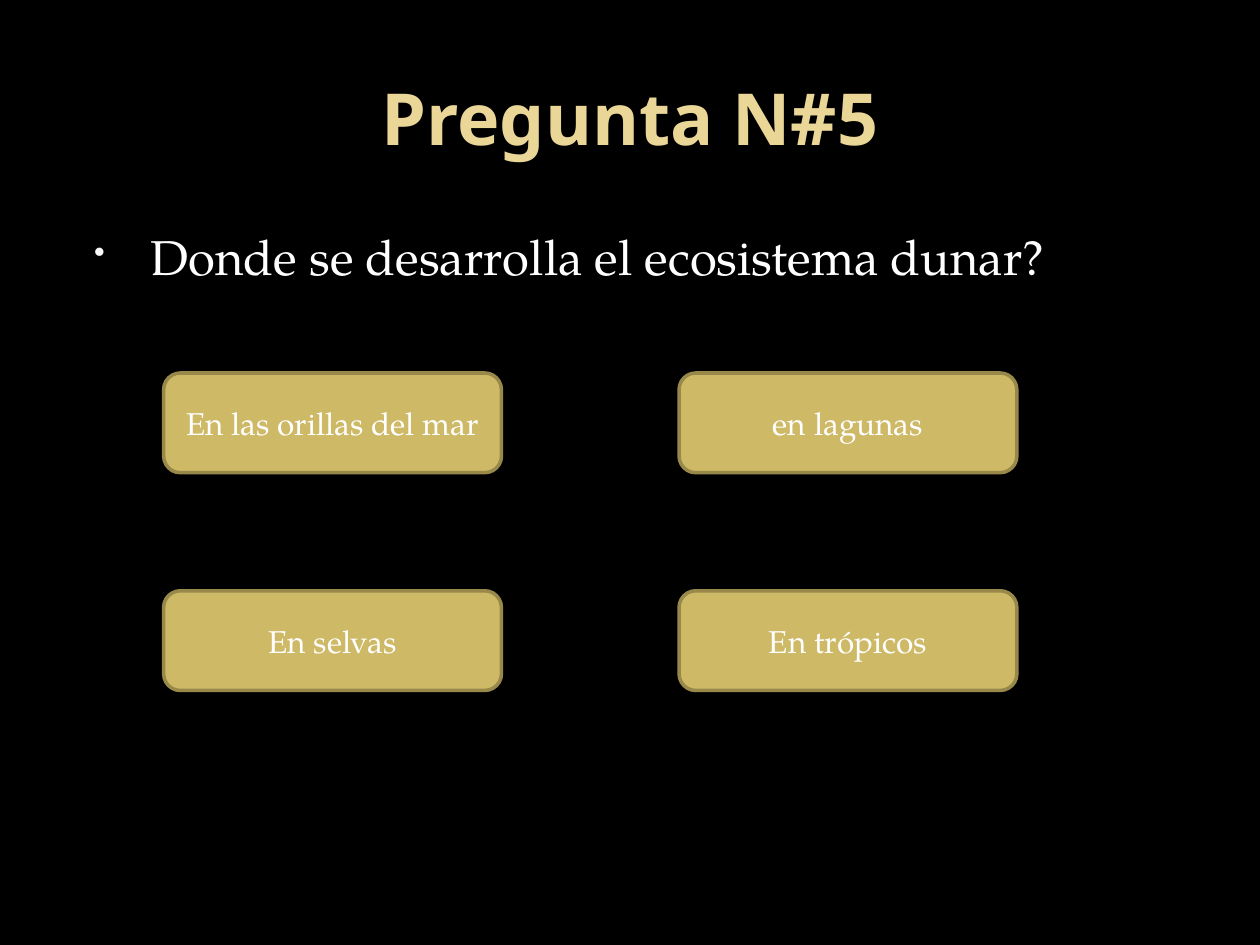
from dataclasses import dataclass

from lxml.etree import SubElement
from pptx import Presentation
from pptx.dml.color import RGBColor as Rgb
from pptx.enum.shapes import MSO_SHAPE as Shape
from pptx.enum.text import MSO_ANCHOR as Anchor, PP_ALIGN as Align
from pptx.oxml.ns import qn
from pptx.util import Cm, Pt


@dataclass(frozen=True)
class Theme:
    background: Rgb = Rgb(0x00, 0x00, 0x00)
    title: Rgb = Rgb(0xEA, 0xD6, 0x96)
    text: Rgb = Rgb(0xFF, 0xFF, 0xFF)
    bullet: str = "F9F9F9"
    button: Rgb = Rgb(0xCE, 0xB9, 0x66)
    border: Rgb = Rgb(0x98, 0x89, 0x4B)
    heading_font: str = "Noto Sans"
    body_font: str = "TeX Gyre Pagella"
    title_size: int = 41
    question_size: int = 28
    answer_size: int = 18


THEME = Theme()


def write(frame, text, color, **font_format):
    """Put one styled run in the frame and return its paragraph."""
    frame.word_wrap = True
    para = frame.paragraphs[0]
    span = para.add_run()
    span.text = text
    for name, value in font_format.items():
        setattr(span.font, name, value)
    span.font.color.rgb = color
    return para


def add_title(page, box, text):
    frame = page.shapes.add_textbox(*map(Cm, box)).text_frame
    para = write(frame, text, THEME.title, name=THEME.heading_font,
                 size=Pt(THEME.title_size), bold=True)
    para.alignment = Align.CENTER
    frame.vertical_anchor = Anchor.MIDDLE


def add_bullet(para, indent, hanging):
    props = para._p.get_or_add_pPr()
    props.set("marL", str(Cm(indent)))
    props.set("indent", str(-Cm(hanging)))
    color = SubElement(props, qn("a:buClr"))
    SubElement(color, qn("a:srgbClr"), val=THEME.bullet)
    SubElement(props, qn("a:buSzPct"), val="65000")
    SubElement(props, qn("a:buChar"), char="•")


def add_question(page, box, text):
    frame = page.shapes.add_textbox(*map(Cm, box)).text_frame
    para = write(frame, text, THEME.text, name=THEME.body_font,
                 size=Pt(THEME.question_size))
    para.space_before = Pt(0.2 * THEME.question_size)
    add_bullet(para, indent=1.52, hanging=1.14)


def add_answer(page, box, text):
    button = page.shapes.add_shape(Shape.ROUNDED_RECTANGLE, *map(Cm, box))
    button.shadow.inherit = False
    button.fill.solid()
    button.fill.fore_color.rgb = THEME.button
    button.line.color.rgb = THEME.border
    button.line.width = Pt(2)
    para = write(button.text_frame, text, THEME.text, name=THEME.body_font,
                 size=Pt(THEME.answer_size))
    para.alignment = Align.CENTER
    button.text_frame.vertical_anchor = Anchor.MIDDLE


def add_answers(page, box, rows):
    """Spread the answers over the box, first and last ones at its edges."""
    left, top, width, height = box
    button_width, button_height = 6.81, 2.01
    column_step = (width - button_width) / (len(rows[0]) - 1)
    row_step = (height - button_height) / (len(rows) - 1)
    for row, answers in enumerate(rows):
        for column, answer in enumerate(answers):
            place = (left + column * column_step, top + row * row_step)
            add_answer(page, (*place, button_width, button_height), answer)


def main():
    deck = Presentation()
    deck.slide_width, deck.slide_height = Cm(25.4), Cm(19.05)
    page = deck.slides.add_slide(deck.slide_layouts[6])
    page.background.fill.solid()
    page.background.fill.fore_color.rgb = THEME.background

    add_title(page, (1.27, 0.76, 22.86, 3.18), "Pregunta N#5")
    add_question(page, (1.27, 4.45, 22.86, 13.08),
                 "Donde se desarrolla el ecosistema dunar?")
    add_answers(page, (3.3, 7.52, 17.2, 6.4), [
        ["En las orillas del mar", "en lagunas"],
        ["En selvas", "En trópicos"],
    ])
    deck.save("out.pptx")


if __name__ == "__main__":
    main()
